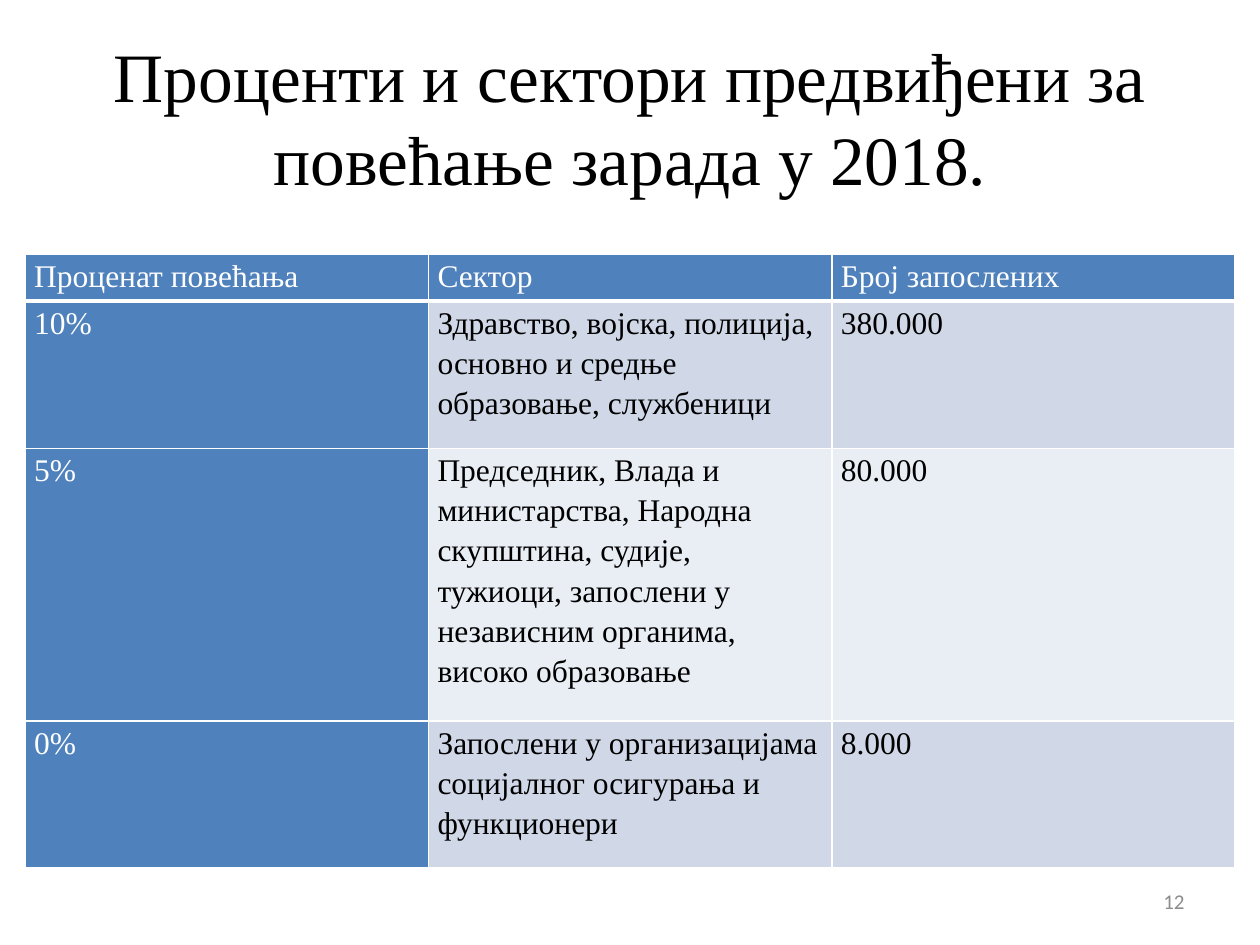
"""Builds a slide with a table of planned 2018 pay rises by sector."""
from dataclasses import dataclass

from lxml import etree
from pptx import Presentation
from pptx.dml.color import RGBColor
from pptx.enum.text import MSO_ANCHOR, PP_ALIGN
from pptx.oxml.ns import qn
from pptx.util import Cm, Pt

CENTER, RIGHT = PP_ALIGN.CENTER, PP_ALIGN.RIGHT
MIDDLE = MSO_ANCHOR.MIDDLE


@dataclass(frozen=True)
class Theme:
    serif: str = "Times New Roman"
    sans: str = "Calibri"
    title_size: float = 39.6
    table_size: float = 18
    number_size: float = 12
    black: str = "000000"
    white: str = "FFFFFF"
    gray: str = "8C8C8C"
    accent: str = "4F81BD"
    bands: tuple[str, str] = ("D0D8E8", "E9EDF4")
    line: float = 1
    header_line: float = 3


@dataclass(frozen=True)
class Label:
    text: str
    left: float
    top: float
    width: float
    height: float
    align: PP_ALIGN
    font: str
    size: float
    color: str


@dataclass(frozen=True)
class Row:
    height: float
    texts: tuple[str, str, str]


THEME = Theme()
LABELS = (
    Label("Проценти и сектори предвиђени за повећање зарада у 2018.",
          1.27, 0.76, 22.86, 3.18, CENTER, THEME.serif, THEME.title_size, THEME.black),
    Label("12", 18.21, 17.65, 5.92, 1.02, RIGHT, THEME.sans, THEME.number_size, THEME.gray),
)
TABLE_LEFT, TABLE_TOP, COLUMN_WIDTH = 0.51, 5.13, 8.13
ROWS = (
    Row(0.94, ("Проценат повећања", "Сектор", "Број запослених")),
    Row(2.97, ("10%", "Здравство, војска, полиција, основно и средње образовање, "
               "службеници", "380.000")),
    Row(5.49, ("5%", "Председник, Влада и министарства, Народна скупштина, судије, "
               "тужиоци, запослени у независним органима, високо образовање", "80.000")),
    Row(2.97, ("0%", "Запослени у организацијама социјалног осигурања и функционери",
               "8.000")),
)


def style_font(font, name: str, size: float, color: str) -> None:
    font.name = name
    font.size = Pt(size)
    font.bold = False
    font.color.rgb = RGBColor.from_string(color)


def add_label(s, label: Label) -> None:
    sp = s.shapes.add_textbox(Cm(label.left), Cm(label.top), Cm(label.width), Cm(label.height))
    tf = sp.text_frame
    tf.word_wrap = True
    tf.vertical_anchor = MIDDLE
    p = tf.paragraphs[0]
    p.text = label.text
    p.alignment = label.align
    style_font(p.font, label.font, label.size, label.color)


def set_borders(cell, top: float, bottom: float) -> None:
    widths = {"a:lnL": THEME.line, "a:lnR": THEME.line, "a:lnT": top, "a:lnB": bottom}
    tc_pr = cell._tc.get_or_add_tcPr()
    for i, (tag, width) in enumerate(widths.items()):
        ln = etree.Element(qn(tag), w=str(Pt(width)))
        fill = etree.SubElement(ln, qn("a:solidFill"))
        etree.SubElement(fill, qn("a:srgbClr"), val=THEME.white)
        tc_pr.insert(i, ln)


def fill_cell(cell, text: str, row: int, col: int) -> None:
    heading = row == 0 or col == 0
    cell.fill.solid()
    cell.fill.fore_color.rgb = RGBColor.from_string(
        THEME.accent if heading else THEME.bands[(row - 1) % 2])
    cell.margin_left = cell.margin_right = Cm(0.18)
    cell.margin_top = cell.margin_bottom = 0
    p = cell.text_frame.paragraphs[0]
    p.text = text
    p.line_spacing = 1.15
    style_font(p.font, THEME.serif, THEME.table_size, THEME.white if heading else THEME.black)
    set_borders(cell, THEME.header_line if row == 1 else THEME.line,
                THEME.header_line if row == 0 else THEME.line)


def add_pay_table(s, rows: tuple[Row, ...]) -> None:
    cols = len(rows[0].texts)
    table = s.shapes.add_table(
        len(rows), cols, Cm(TABLE_LEFT), Cm(TABLE_TOP), Cm(COLUMN_WIDTH * cols),
        Cm(sum(row.height for row in rows))).table
    table.first_col = True
    for column in table.columns:
        column.width = Cm(COLUMN_WIDTH)
    for i, row in enumerate(rows):
        table.rows[i].height = Cm(row.height)
        for j, text in enumerate(row.texts):
            fill_cell(table.cell(i, j), text, i, j)


def main() -> None:
    prs = Presentation()
    prs.slide_width, prs.slide_height = Cm(25.4), Cm(19.05)
    s = prs.slides.add_slide(prs.slide_layouts[6])
    add_pay_table(s, ROWS)
    for label in LABELS:
        add_label(s, label)
    prs.save("out.pptx")


if __name__ == "__main__":
    main()
